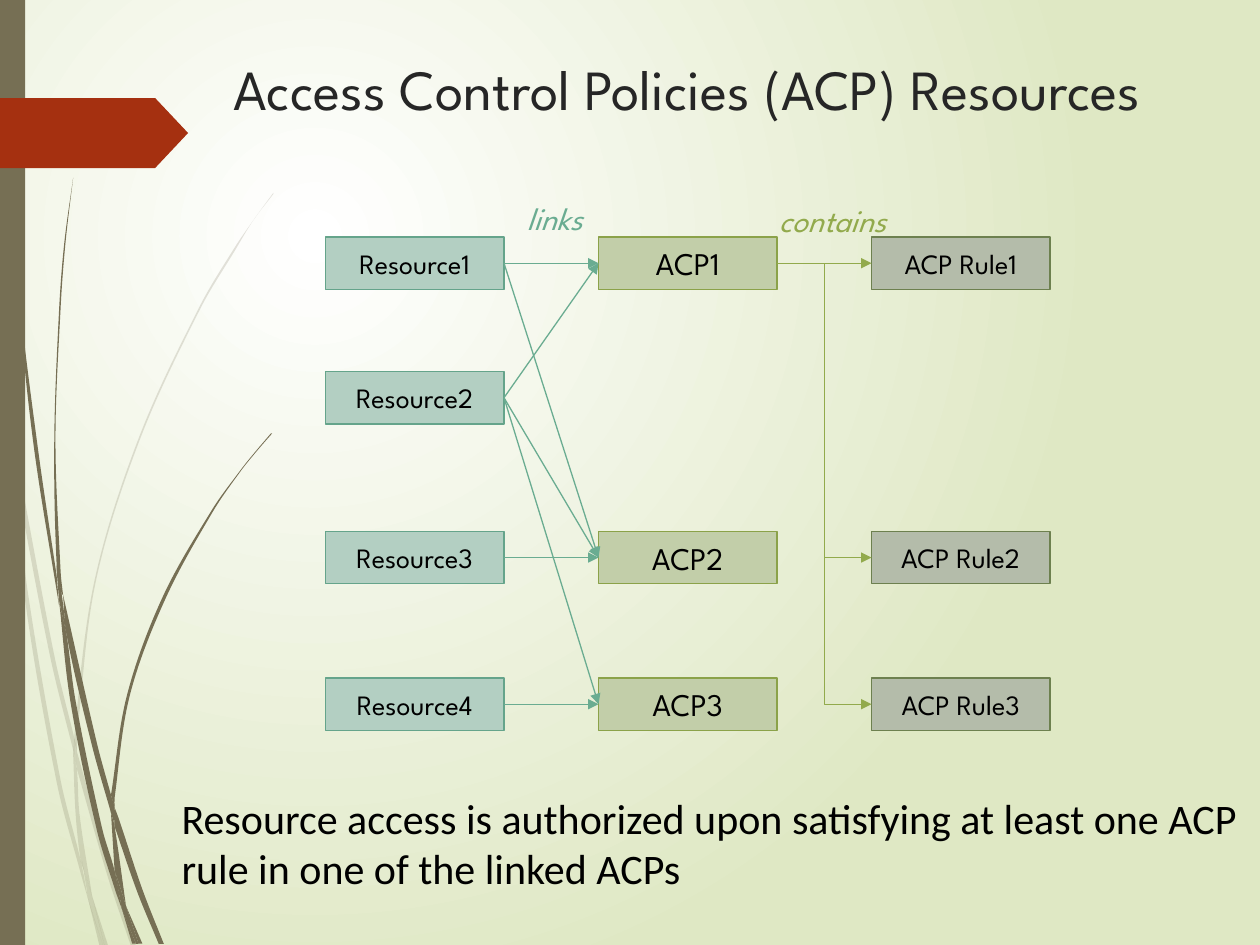
from math import hypot
from typing import NamedTuple

from pptx import Presentation
from pptx.dml.color import RGBColor
from pptx.enum.shapes import MSO_CONNECTOR as Route, MSO_SHAPE as Preset
from pptx.enum.text import MSO_ANCHOR as Anchor, MSO_AUTO_SIZE as AutoSize, PP_ALIGN as Align
from pptx.oxml.ns import qn
from pptx.oxml.xmlchemy import OxmlElement
from pptx.util import Pt

FONT = "League Spartan"
OLIVE = "766F54"
BOX_WIDTH, BOX_HEIGHT = 102, 30
COLUMN_LEFT, COLUMN_STEP = 186, 156
ROW_TOPS = (135.4, 212.3, 303.6, 387.4)
LEFT_SITE, RIGHT_SITE = 1, 3

Points = list[tuple[float, float]]


class Column(NamedTuple):
    fill: str
    line: str
    size: float
    rows: dict[str, int]


class Link(NamedTuple):
    source: str
    target: str
    color: str
    route: Route = Route.STRAIGHT


class Blade(NamedTuple):
    """A piece of grass between two smooth edges, one going out and one back."""
    out: Points
    back: Points


COLUMNS = [
    Column("B3CFC2", "65A48B", 16, {f"Resource{i + 1}": i for i in range(4)}),
    Column("C2CEA9", "8BA249", 18, {"ACP1": 0, "ACP2": 2, "ACP3": 3}),
    Column("B4BCAA", "6D804F", 16, {"ACP Rule1": 0, "ACP Rule2": 2, "ACP Rule3": 3}),
]
LINKS_COLOR, CONTAINS_COLOR = "6AAC91", "92AA4C"
LINKED_ACPS = {"Resource1": (1, 2), "Resource2": (2, 1, 3), "Resource3": (2,), "Resource4": (3,)}
LINKS = [Link(resource, f"ACP{n}", LINKS_COLOR)
         for resource, numbers in LINKED_ACPS.items() for n in numbers]
LINKS += [Link("ACP1", "ACP Rule1", CONTAINS_COLOR)]
LINKS += [Link("ACP1", f"ACP Rule{n}", CONTAINS_COLOR, Route.ELBOW) for n in (2, 3)]

PALE_GRASS = [
    Blade([(5.8, 252), (4.3, 231.8), (0, 203)], [(0, 215.3), (5, 247.7)]),
    Blade([(7.2, 248.4), (31, 374.4), (42.5, 421.9)],
          [(42.5, 431.3), (28.8, 375.8), (8.6, 270.7)]),
    Blade([(43.9, 429.1), (46.1, 437), (63.4, 498.2), (77.8, 540.7)],
          [(74.9, 540.7), (61.2, 499.7), (43.9, 439.2)]),
    Blade([(52.6, 511.9), (61.9, 540.7)], [(59.8, 540.7)]),
    Blade([(5.8, 252), (8.6, 270.7), (15.8, 337.7), (34.6, 445.7), (46.1, 491.8), (50.4, 514.1)],
          [(46.1, 499), (32.4, 447.1), (13.7, 338.4), (5.8, 252)]),
    Blade([(41.8, 431.3), (43.9, 439.2), (45.4, 465.1), (52.6, 511.9)],
          [(48.2, 498.2), (46.1, 491.8), (43.2, 465.1), (41.8, 431.3)]),
    Blade([(156.2, 110.2), (144.7, 126), (133.9, 141.8), (113.8, 175.7), (79.2, 250.6),
           (54, 331.9), (42.5, 420.5), (43.9, 429.1)],
          [(43.9, 420.5), (54.7, 332.6), (79.9, 251.3), (114.5, 176.4), (134.6, 142.6),
           (144.7, 126), (156.2, 110.9)]),
    Blade([(50.4, 514.1), (59, 540.7)], [(56.9, 540.7)]),
    Blade([(42.5, 421.9), (43.9, 429.1), (43.9, 439.2)], [(43.9, 437.8), (41.8, 431.3)]),
    Blade([(46.8, 491.8), (48.2, 498.2), (52.6, 511.9), (59.8, 540.7)],
          [(59, 540.7), (50.4, 514.1), (49.7, 509)]),
]
DARK_GRASS = [
    Blade([(1.4, 0), (2.2, 34.6), (3.6, 79.2), (10.1, 167.8), (19.4, 255.6), (33.8, 346.3)],
          [(32.4, 329), (21.6, 255.6), (10.8, 167), (4.3, 78.5), (2.9, 34.6), (2.2, 0)]),
    Blade([(36, 339.8), (55.4, 424.8), (63.4, 454.3)],
          [(63.4, 464.4), (52.6, 426.2), (38.2, 363.6), (36, 339.8)]),
    Blade([(65.5, 461.5), (67.7, 467.3), (81.4, 508.3), (93.6, 539.3)],
          [(90.7, 539.3), (78.5, 509.8), (65.5, 472.3)]),
    Blade([(33.8, 343.4), (38.2, 363.6), (43.2, 400.3), (58.3, 473), (65.5, 497.5), (69.8, 519.8)],
          [(66.2, 509.8), (55.4, 474.5), (40.3, 401), (33.8, 343.4)]),
    Blade([(41.8, 101.5), (36.7, 139), (33.8, 176.4), (31, 251.3), (32.4, 323.3), (35.3, 339.8)],
          [(36, 339.8), (34.6, 326.2), (31.7, 251.3), (34.6, 176.4), (37.4, 139), (41.8, 101.5)]),
    Blade([(72, 517.7), (81.4, 539.3)], [(79.2, 539.3)]),
    Blade([(32.4, 323.3), (35.3, 339.8), (38.2, 363.6)], [(33.8, 343.4), (32.4, 326.2)]),
    Blade([(154.8, 247.7), (146.2, 257.8), (137.5, 268.6), (121, 291.6), (92.9, 341.3),
           (72.7, 396.7), (63.4, 454.3)],
          [(65.5, 461.5), (65.5, 455.8), (74.2, 397.4), (94.3, 342.7), (121.7, 292.3),
           (137.5, 269.3), (146.2, 258.5), (155.5, 247.7)]),
    Blade([(69.8, 519.8), (77.8, 539.3)], [(75.6, 539.3)]),
    Blade([(63.4, 464.4), (65.5, 472.3), (72, 517.7)], [(69.1, 508.3), (65.5, 497.5)]),
    Blade([(63.4, 454.3), (65.5, 461.5), (65.5, 472.3)], [(64.8, 468.7), (63.4, 464.4)]),
    Blade([(65.5, 497.5), (69.1, 508.3), (72, 517.7), (79.2, 539.3)],
          [(77.8, 539.3), (69.8, 519.8), (69.1, 516.2)]),
]


def rgb(color: str) -> RGBColor:
    return RGBColor.from_string(color)


def write(frame, text: str, *, size: float, color: str = "000000", font: str = FONT,
          italic: bool = False, align=Align.LEFT, anchor=Anchor.TOP, wrap: bool = True) -> None:
    frame.auto_size = AutoSize.NONE if wrap else AutoSize.SHAPE_TO_FIT_TEXT
    frame.word_wrap = wrap
    frame.vertical_anchor = anchor
    paragraph = frame.paragraphs[0]
    paragraph.alignment = align
    run = paragraph.add_run()
    run.text = text
    run.font.size, run.font.name, run.font.italic = Pt(size), font, italic
    run.font.color.rgb = rgb(color)


def paint(shape, fill: str, line: str | None = None) -> None:
    shape.shadow.inherit = False
    shape.fill.solid()
    shape.fill.fore_color.rgb = rgb(fill)
    if line:
        shape.line.color.rgb = rgb(line)
        shape.line.width = Pt(0.75)
    else:
        shape.line.fill.background()


def add_preset(slide, preset, left: float, top: float, width: float, height: float,
               fill: str, line: str | None = None):
    shape = slide.shapes.add_shape(preset, Pt(left), Pt(top), Pt(width), Pt(height))
    paint(shape, fill, line)
    return shape


def add_text(slide, text: str, left: float, top: float, width: float, height: float,
             **text_format) -> None:
    box = slide.shapes.add_textbox(Pt(left), Pt(top), Pt(width), Pt(height))
    write(box.text_frame, text, **text_format)


def bezier_segments(edge: Points) -> list[Points]:
    """Two control points and an end point for each step of a smooth edge."""
    tangents = []
    for (x0, y0), (x1, y1) in zip([edge[0], *edge], [*edge[1:], edge[-1]]):
        length = hypot(x1 - x0, y1 - y0) or 1
        tangents.append(((x1 - x0) / length, (y1 - y0) / length))
    segments = []
    for (x0, y0), (x1, y1), (u0, v0), (u1, v1) in zip(edge, edge[1:], tangents, tangents[1:]):
        reach = hypot(x1 - x0, y1 - y0) / 3
        segments.append([(x0 + u0 * reach, y0 + v0 * reach),
                         (x1 - u1 * reach, y1 - v1 * reach), (x1, y1)])
    return segments


def add_blade(slide, blade: Blade, opacity: int) -> None:
    outline = [(Pt(x), Pt(y)) for x, y in blade.out + blade.back]
    builder = slide.shapes.build_freeform(*outline[0], scale=1.0)
    builder.add_line_segments(outline[1:], close=True)
    shape = builder.convert_to_shape()
    paint(shape, OLIVE)
    turn = len(blade.out)
    steps = list(shape.element.iter(qn("a:lnTo")))
    curved_steps = steps[:turn - 1] + steps[turn:]
    curves = bezier_segments(outline[:turn]) + bezier_segments(outline[turn:])
    for step, segment in zip(curved_steps, curves):
        curve = OxmlElement("a:cubicBezTo")
        for x, y in segment:
            point = OxmlElement("a:pt")
            point.set("x", str(round(x - shape.left)))
            point.set("y", str(round(y - shape.top)))
            curve.append(point)
        step.getparent().replace(step, curve)
    if opacity < 100:
        alpha = OxmlElement("a:alpha")
        alpha.set("val", str(opacity * 1000))
        next(shape.element.iter(qn("a:srgbClr"))).append(alpha)


def add_link(slide, link: Link, boxes: dict) -> None:
    connector = slide.shapes.add_connector(link.route, 0, 0, 0, 0)
    connector.begin_connect(boxes[link.source], RIGHT_SITE)
    connector.end_connect(boxes[link.target], LEFT_SITE)
    connector.line.color.rgb = rgb(link.color)
    connector.line.width = Pt(0.75)
    arrowhead = OxmlElement("a:tailEnd")
    arrowhead.set("type", "triangle")
    next(connector.element.iter(qn("a:ln"))).append(arrowhead)
    connector.element.spPr.append(OxmlElement("a:effectLst"))


def set_background(slide) -> None:
    """Radial gradient, white at the upper left."""
    fill = slide.background.fill
    fill.gradient()
    for stop, position, color in zip(fill.gradient_stops, (0, 1), ("FFFFFF", "DFE8C4")):
        stop.position = position
        stop.color.rgb = rgb(color)
    linear = next(slide.element.iter(qn("a:lin")))
    radial = OxmlElement("a:path")
    radial.set("path", "circle")
    focus = OxmlElement("a:fillToRect")
    for side, percent in zip("ltrb", (50, 50, 100, 100)):
        focus.set(side, str(percent * 1000))
    radial.append(focus)
    linear.getparent().replace(linear, radial)


def main() -> None:
    deck = Presentation()
    deck.slide_width, deck.slide_height = Pt(720), Pt(540)
    slide = deck.slides.add_slide(deck.slide_layouts[5])
    set_background(slide)
    for grass, opacity in ((PALE_GRASS, 20), (DARK_GRASS, 100)):
        for blade in grass:
            add_blade(slide, blade, opacity)
    add_preset(slide, Preset.RECTANGLE, 0, 0, 14.4, 540, OLIVE)
    banner = add_preset(slide, Preset.PENTAGON, 0, 56, 107.5, 40, "A53010")
    banner.adjustments[0] = 0.47

    title = slide.shapes.title
    title.left, title.top, title.width, title.height = Pt(126), Pt(27.4), Pt(570), Pt(90)
    write(title.text_frame, "Access Control Policies (ACP) Resources", size=32.4, color="262626")
    boxes = {}
    for index, column in enumerate(COLUMNS):
        for name, row in column.rows.items():
            boxes[name] = add_preset(slide, Preset.RECTANGLE, COLUMN_LEFT + index * COLUMN_STEP,
                                     ROW_TOPS[row], BOX_WIDTH, BOX_HEIGHT,
                                     column.fill, column.line)
            write(boxes[name].text_frame, name, size=column.size,
                  align=Align.CENTER, anchor=Anchor.MIDDLE)
    for link in LINKS:
        add_link(slide, link, boxes)

    label = {"size": 18, "italic": True, "wrap": False}
    add_text(slide, "links", 294, 110.2, 47.5, 29, color=LINKS_COLOR, **label)
    add_text(slide, "contains", 438, 111.3, 76.5, 29, color=CONTAINS_COLOR, **label)
    add_text(slide, "Resource access is authorized upon satisfying at least one ACP rule "
             "in one of the linked ACPs", 96.7, 449.3, 628.5, 60, size=24, font="Calibri")
    deck.save("out.pptx")


if __name__ == "__main__":
    main()
